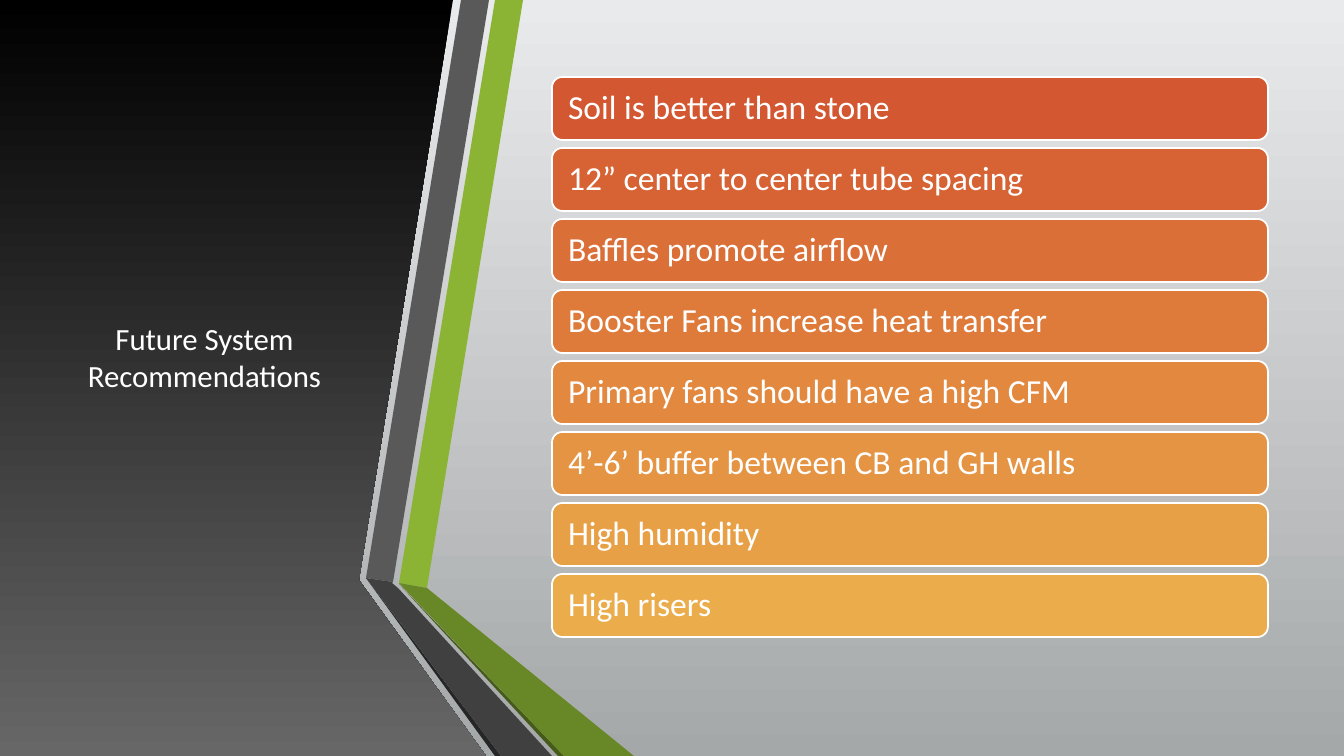
from pptx import Presentation
from pptx.dml.color import RGBColor
from pptx.enum.shapes import MSO_SHAPE as SHAPE
from pptx.enum.text import MSO_ANCHOR as ANCHOR, MSO_AUTO_SIZE as AUTO, PP_ALIGN as ALIGN
from pptx.util import Pt

PX = 914400 / 100.8
W, H = 1344, 756

WHITE = RGBColor(0xFF, 0xFF, 0xFF)
BLACK = RGBColor(0x00, 0x00, 0x00)
PANEL_GREY = RGBColor(0x67, 0x67, 0x67)
BG_TOP = RGBColor(0xE9, 0xEA, 0xEB)
BG_BOTTOM = RGBColor(0xA5, 0xA8, 0xA9)
LIME = RGBColor(0x8B, 0xB4, 0x34)
GREEN = RGBColor(0x68, 0x87, 0x27)
DARK_GREEN = RGBColor(0x46, 0x5A, 0x1A)
GREY = RGBColor(0x59, 0x59, 0x59)
DARK_GREY = RGBColor(0x40, 0x40, 0x40)
CHARCOAL = RGBColor(0x26, 0x26, 0x26)


def emu(*lengths):
    return [round(n * PX) for n in lengths]


def write(shape, text, size, align, left=10, right=10):
    tf = shape.text_frame
    tf.word_wrap = True
    tf.auto_size = AUTO.NONE
    tf.vertical_anchor = ANCHOR.MIDDLE
    tf.margin_left, tf.margin_right = emu(left, right)
    p = tf.paragraphs[0]
    p.alignment = align
    r = p.add_run()
    r.text = text
    r.font.name = "Calibri"
    r.font.size = Pt(size)
    r.font.color.rgb = WHITE


prs = Presentation()
prs.slide_width, prs.slide_height = emu(W, H)
s = prs.slides.add_slide(prs.slide_layouts[5])

# Dark panel and folded ribbons, from back to front
outlines = [
    (BLACK, [(0, 0), (453, 0), (359, 580), (486, H), (0, H)]),
    (LIME, [(399, 583), (427, 588), (523, 0), (495, 0)]),
    (GREY, [(489, 0), (461, 0), (366, 578), (393, 582)]),
    (CHARCOAL, [(366, 578), (495, H), (501, H)]),
    (DARK_GREEN, [(399, 584), (558, H), (564, H)]),
    (GREEN, [(399, 583), (564, H), (634, H), (427, 588)]),
    (DARK_GREY, [(552, H), (398, 588), (392, 583), (393, 582), (366, 578), (501, H)]),
]
pieces = []
for color, points in outlines:
    builder = s.shapes.build_freeform(*points[0], scale=PX)
    builder.add_line_segments(points[1:], close=True)
    piece = builder.convert_to_shape()
    piece.shadow.inherit = False
    piece.fill.solid()
    piece.fill.fore_color.rgb = color
    piece.line.fill.background()
    pieces.append(piece)
panel = pieces[0]

# Vertical gradients, first colour at the top
for fill, top, bottom in [(s.background.fill, BG_TOP, BG_BOTTOM),
                          (panel.fill, BLACK, PANEL_GREY)]:
    fill.gradient()
    fill.gradient_angle = 270
    fill.gradient_stops[0].color.rgb = top
    fill.gradient_stops[1].color.rgb = bottom

title = s.shapes.title
title.left, title.top, title.width, title.height = emu(59, 76, 291, 562)
write(title, "Future System Recommendations", 22, ALIGN.CENTER)
panel.element.addnext(title.element)

# Recommendation bars
recommendations = [
    ("Soil is better than stone", RGBColor(0xD3, 0x57, 0x31)),
    ("12” center to center tube spacing", RGBColor(0xD7, 0x63, 0x34)),
    ("Baffles promote airflow", RGBColor(0xDB, 0x6F, 0x38)),
    ("Booster Fans increase heat transfer", RGBColor(0xDE, 0x7B, 0x3B)),
    ("Primary fans should have a high CFM", RGBColor(0xE2, 0x88, 0x3F)),
    ("4’-6’ buffer between CB and GH walls", RGBColor(0xE5, 0x94, 0x43)),
    ("High humidity", RGBColor(0xE8, 0xA0, 0x47)),
    ("High risers", RGBColor(0xEB, 0xAC, 0x4B)),
]
for i, (text, color) in enumerate(recommendations):
    bar = s.shapes.add_shape(SHAPE.ROUNDED_RECTANGLE, *emu(552, 77 + 71 * i, 716, 63))
    bar.shadow.inherit = False
    bar.fill.solid()
    bar.fill.fore_color.rgb = color
    bar.line.color.rgb = WHITE
    bar.line.width = Pt(1.25)
    write(bar, text, 24, ALIGN.LEFT, left=13, right=13)
    bar.text_frame.paragraphs[0].line_spacing = 0.9

prs.save("out.pptx")
